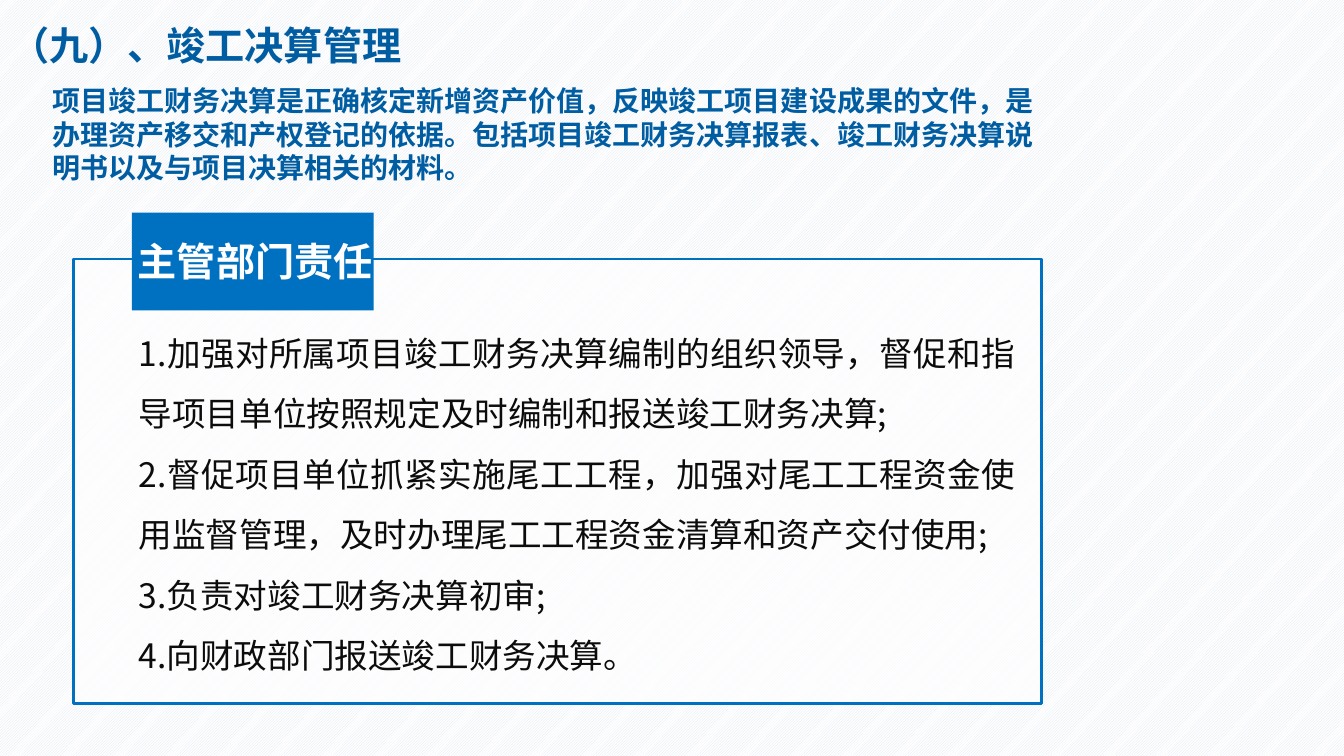
import pptx
import pptx.util
import pptx.dml.color
import pptx.enum.dml
import pptx.enum.shapes
import pptx.enum.text
import pptx.oxml
import pptx.oxml.ns
from dataclasses import dataclass

PX = 9144


@dataclass(frozen=True)
class Theme:
    font: str = "Noto Sans CJK SC"
    blue: str = "0070C0"
    heading: str = "005DA2"
    ink: str = "0C0C0C"
    white: str = "FFFFFF"
    stripe: str = "DCE6F2"
    heading_size: int = 28
    intro_size: int = 20
    duty_size: int = 24


theme = Theme()
rgb = pptx.dml.color.RGBColor.from_string
align = pptx.enum.text.PP_ALIGN


def write(box, bounds, lines, size, color, bold=False, spacing=1.0, alignment=align.LEFT):
    box.left, box.top, box.width, box.height = [value * PX for value in bounds]
    frame = box.text_frame
    frame.word_wrap = True
    frame.auto_size = pptx.enum.text.MSO_AUTO_SIZE.NONE
    frame.vertical_anchor = pptx.enum.text.MSO_ANCHOR.TOP
    frame.text = "\n".join(lines)
    for para in frame.paragraphs:
        para.alignment = alignment
        para.line_spacing = spacing
        para.space_before = pptx.util.Pt(0)
        for span in para.runs:
            span.font.size = pptx.util.Pt(size)
            span.font.bold = bold
            span.font.color.rgb = rgb(color)
            span.font.name = theme.font
            east_asian = pptx.oxml.parse_xml(
                f'<a:ea {pptx.oxml.ns.nsdecls("a")} typeface="{theme.font}"/>')
            span.font._element.append(east_asian)


def rectangle(bounds, color):
    shape = page.shapes.add_shape(
        pptx.enum.shapes.MSO_SHAPE.RECTANGLE, *[value * PX for value in bounds])
    shape.shadow.inherit = False
    shape.fill.solid()
    shape.fill.fore_color.rgb = rgb(color)
    shape.line.fill.background()
    return shape


deck = pptx.Presentation()
deck.slide_width = 1334 * PX
deck.slide_height = 750 * PX
page = deck.slides.add_slide(deck.slide_layouts.get_by_name("Title Only"))

backdrop = page.background.fill
backdrop.patterned()
backdrop.pattern = pptx.enum.dml.MSO_PATTERN.LIGHT_UPWARD_DIAGONAL
backdrop.fore_color.rgb = rgb(theme.stripe)
backdrop.back_color.rgb = rgb(theme.white)

panel = rectangle((73, 257, 961, 441), theme.white)
panel.line.color.rgb = rgb(theme.blue)
panel.line.width = pptx.util.Pt(2)
panel_color = panel.fill._xPr.find(".//" + pptx.oxml.ns.qn("a:srgbClr"))
panel_color.append(pptx.oxml.parse_xml(
    f'<a:alpha {pptx.oxml.ns.nsdecls("a")} val="58000"/>'))

rectangle((131, 211, 240, 97), theme.blue)

label = page.shapes.add_textbox(0, 0, 0, 0)
write(label, (127, 231, 568, 57), ["主管部门责任"],
      theme.heading_size, theme.white, bold=True)

duties = page.shapes.add_textbox(0, 0, 0, 0)
write(duties, (128, 305, 890, 374), [
    "1.加强对所属项目竣工财务决算编制的组织领导，督促和指导项目单位按照规定及时编制和报送竣工财务决算;",
    "2.督促项目单位抓紧实施尾工工程，加强对尾工工程资金使用监督管理，及时办理尾工工程资金清算和资产交付使用;",
    "3.负责对竣工财务决算初审;",
    "4.向财政部门报送竣工财务决算。",
], theme.duty_size, theme.ink, spacing=1.5, alignment=align.JUSTIFY)

write(page.shapes.title, (0, 16, 547, 57), ["（九）、竣工决算管理"],
      theme.heading_size, theme.heading, bold=True)

intro = page.shapes.add_textbox(0, 0, 0, 0)
write(intro, (42, 78, 1000, 111), [
    "项目竣工财务决算是正确核定新增资产价值，反映竣工项目建设成果的文件，"
    "是办理资产移交和产权登记的依据。包括项目竣工财务决算报表、"
    "竣工财务决算说明书以及与项目决算相关的材料。",
], theme.intro_size, theme.heading, bold=True)

deck.save("out.pptx")
